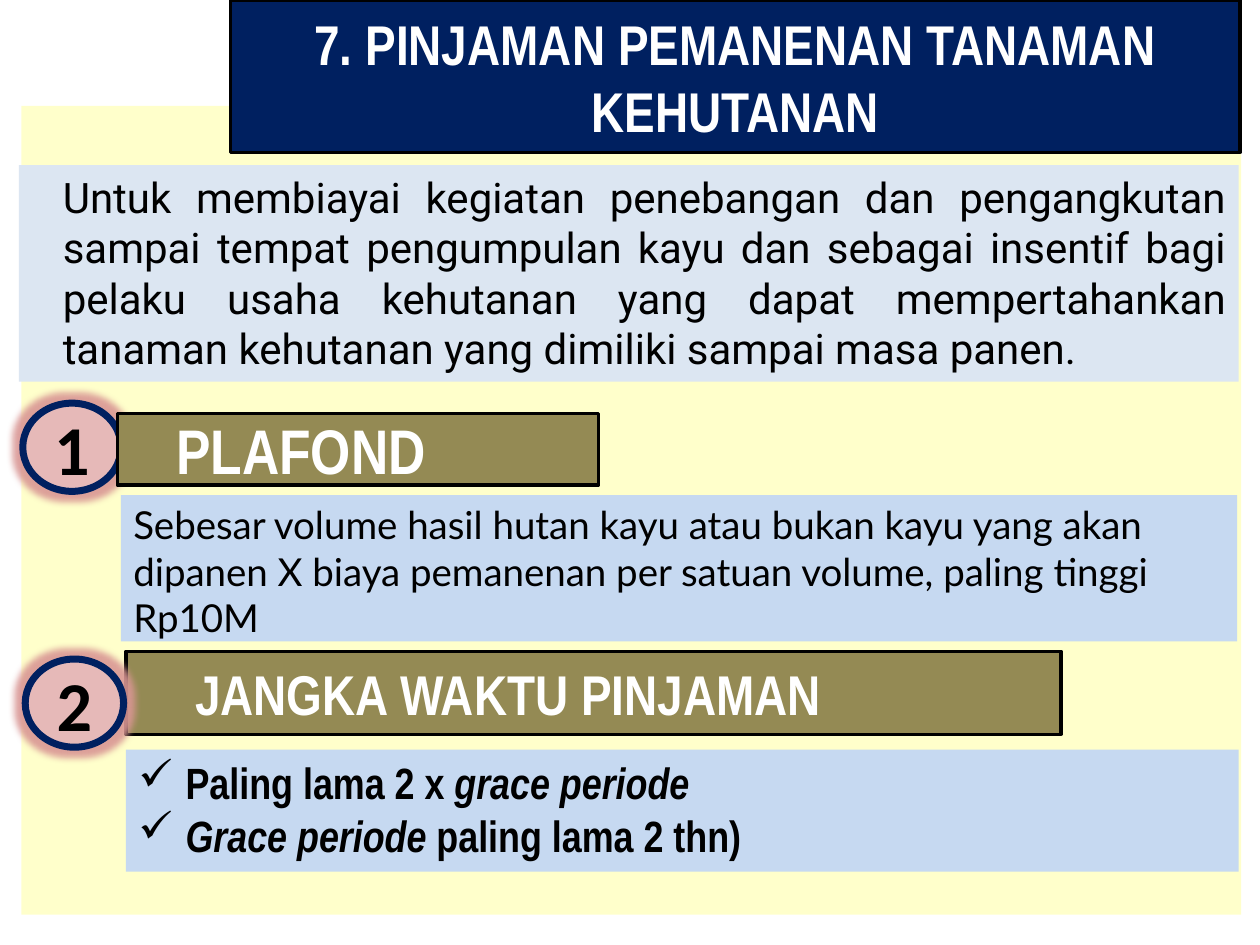
from dataclasses import dataclass

from lxml import etree
from pptx import Presentation
from pptx import util as u
from pptx.dml.color import RGBColor
from pptx.enum import shapes, text
from pptx.oxml.ns import qn

Pt = u.Pt
Align = text.PP_ALIGN
NAVY, OLIVE, SKY, BLACK, WHITE = "002060", "948A54", "C6D9F1", "000000", "FFFFFF"
NARROW = "Arial Narrow"


@dataclass
class Panel:
    """A filled shape; each paragraph is a list of (wording, italic) spans."""
    left: float
    top: float
    width: float
    height: float
    fill: str
    paragraphs: tuple = ()
    font: str = NARROW
    size: float = 32
    color: str = BLACK
    bold: bool = False
    align: Align = Align.LEFT
    middle: bool = False
    indent: float = 0
    bullet: str = ""
    line: str = ""
    line_width: float = 2
    kind: shapes.MSO_SHAPE = shapes.MSO_SHAPE.RECTANGLE


def plain(wording: str) -> tuple:
    return ([(wording, False)],)


def banner(left: float, top: float, width: float, height: float, wording: str,
           **options) -> Panel:
    """A bordered heading bar with bold white text."""
    style = dict(fill=OLIVE, color=WHITE, bold=True, middle=True, line=BLACK)
    return Panel(left, top, width, height, paragraphs=plain(wording), **{**style, **options})


def badge(left: float, top: float, number: str) -> Panel:
    return Panel(left, top, 56.2, 50.4, "E6B9B8", plain(number), "Calibri", 40,
                 bold=True, align=Align.CENTER, middle=True, line=NAVY,
                 line_width=4, kind=shapes.MSO_SHAPE.OVAL)


def rgb(value: str) -> RGBColor:
    return RGBColor.from_string(value)


def set_alpha(color_element, percent: int) -> None:
    etree.SubElement(color_element, qn("a:alpha")).set("val", str(percent * 1000))


def add_glow(shape, color: str, radius: float, percent: int) -> None:
    effects = shape.element.spPr.find(qn("a:effectLst"))
    glow = etree.SubElement(effects, qn("a:glow"), rad=str(Pt(radius)))
    set_alpha(etree.SubElement(glow, qn("a:srgbClr"), val=color), percent)


def set_indent(para, indent: float, bullet: str) -> None:
    properties = para._p.get_or_add_pPr()
    properties.set("marL", str(Pt(indent)))
    properties.set("indent", str(Pt(-indent if bullet else 0)))
    if bullet:
        etree.SubElement(properties, qn("a:buChar")).set("char", bullet)


def write_text(shape, panel: Panel) -> None:
    frame = shape.text_frame
    frame.word_wrap = True
    anchor = text.MSO_ANCHOR
    frame.vertical_anchor = anchor.MIDDLE if panel.middle else anchor.TOP
    for index, spans in enumerate(panel.paragraphs):
        para = frame.add_paragraph() if index else frame.paragraphs[0]
        para.alignment = panel.align
        set_indent(para, panel.indent, panel.bullet)
        para.font.name = panel.font
        para.font.size = Pt(panel.size)
        para.font.bold = panel.bold
        para.font.color.rgb = rgb(panel.color)
        for wording, italic in spans:
            span = para.add_run()
            span.text = wording
            if italic:
                span.font.italic = True


def draw(page, panel: Panel):
    box = (Pt(side) for side in (panel.left, panel.top, panel.width, panel.height))
    shape = page.shapes.add_shape(panel.kind, *box)
    shape.shadow.inherit = False
    shape.fill.solid()
    shape.fill.fore_color.rgb = rgb(panel.fill)
    if panel.line:
        shape.line.color.rgb = rgb(panel.line)
        shape.line.width = Pt(panel.line_width)
    else:
        shape.line.fill.background()
    if panel.paragraphs:
        write_text(shape, panel)
    if panel.kind == shapes.MSO_SHAPE.OVAL:
        add_glow(shape, "D99694", 8, 90)
    return shape


PURPOSE = ("Untuk membiayai kegiatan penebangan dan pengangkutan sampai tempat "
           "pengumpulan kayu dan sebagai insentif bagi pelaku usaha kehutanan yang "
           "dapat mempertahankan tanaman kehutanan yang dimiliki sampai masa panen.")
CEILING = ("Sebesar volume hasil hutan kayu atau bukan kayu yang akan dipanen X biaya "
           "pemanenan per satuan volume, paling tinggi Rp10M")
TERMS = (
    [("Paling lama 2 x ", False), ("grace periode", True)],
    [("Grace periode ", True), ("paling lama 2 thn)", False)],
)

PANELS = [
    # Loan ceiling heading and purpose
    badge(13, 230.4, "1"),
    banner(67, 236.2, 275, 41, "PLAFOND", size=36, indent=26.6),
    Panel(10.8, 94.3, 697, 123.8, "DCE6F2", plain(PURPOSE), "Roboto", 24,
          align=Align.JUSTIFY, indent=18),
    Panel(69.1, 283, 637.9, 83.5, SKY, plain(CEILING), "Lato", 22),
    # Loan term heading
    banner(72, 372.2, 534.2, 47.5, "JANGKA WAKTU PINJAMAN", indent=32.4),
    badge(14.4, 376.6, "2"),
    # Title
    banner(131.8, 0, 576.7, 87.1, "7. PINJAMAN PEMANENAN TANAMAN KEHUTANAN",
           fill=NAVY, align=Align.CENTER),
    # Loan term details
    Panel(72, 428.4, 635.8, 69.8, SKY, TERMS, size=25, bold=True, indent=27, bullet="✓"),
]


def main() -> None:
    deck = Presentation()
    deck.slide_width, deck.slide_height = Pt(720), Pt(540)
    page = deck.slides.add_slide(deck.slide_layouts[6])

    # Half-transparent yellow backdrop
    backdrop = draw(page, Panel(12.2, 60.5, 697, 462.2, "FFFF99"))
    set_alpha(backdrop.element.spPr.find(qn("a:solidFill"))[0], 50)

    for panel in PANELS:
        draw(page, panel)
    deck.save("out.pptx")


if __name__ == "__main__":
    main()
